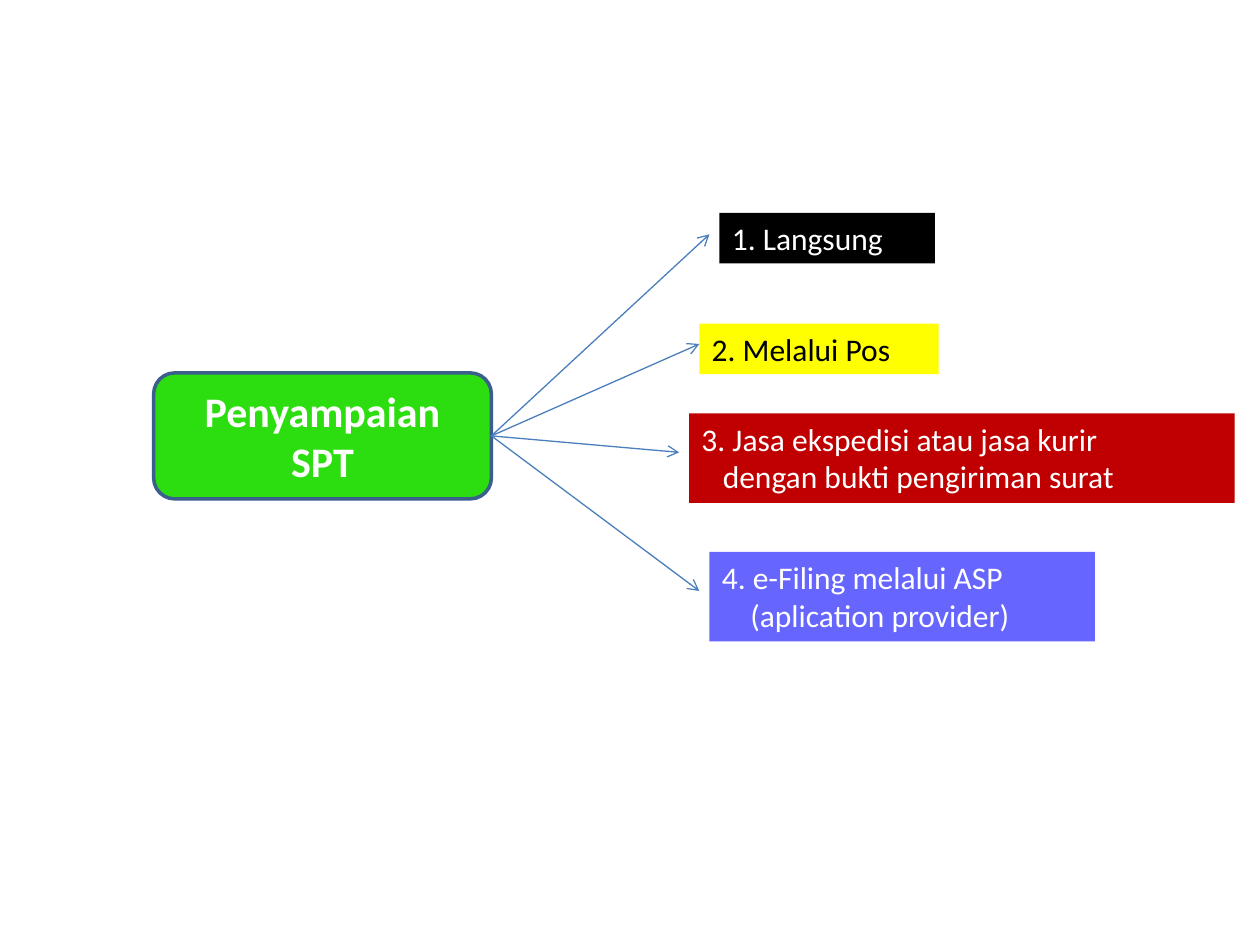
"""Build a slide showing the four ways to submit an SPT."""
from pptx import Presentation
from pptx.dml.color import RGBColor
from pptx.enum import shapes, text
from pptx.oxml import ns, xmlchemy
from pptx.util import Pt

COLORS = {
    "green": "2CDD0F", "edge": "3A5F8C", "arrow": "4B7EBC", "white": "FFFFFF",
    "black": "000000", "yellow": "FFFF00", "red": "C00000", "violet": "6666FF",
}
METHODS = [
    (411.1, 121.7, 123.1, 28.8, "black", "white", ["1. Langsung"], 0, (405.4, 133.9)),
    (399.6, 185, 136.8, 28.8, "yellow", "black", ["2. Melalui Pos"], 0, (399.6, 196.6)),
    (393.8, 236.2, 311.8, 51.1, "red", "white",
     ["3. Jasa ekspedisi atau jasa kurir", "dengan bukti pengiriman surat"], 12.2, (388.1, 258.5)),
    (405.4, 315.4, 220.3, 51.1, "violet", "white",
     ["4. e-Filing melalui ASP", "(aplication provider)"], 16.3, (399.6, 337.7)),
]


def rgb(name):
    return RGBColor.from_string(COLORS[name])


def add_box(kind, box, fill, lines, color, indent, para, font):
    sp = s.shapes.add_shape(kind, *map(Pt, box))
    sp.shadow.inherit = False
    sp.fill.solid()
    sp.fill.fore_color.rgb = rgb(fill)
    sp.line.fill.background()
    tf = sp.text_frame
    tf.word_wrap = True
    for i, line in enumerate(lines):
        p = tf.paragraphs[0] if i == 0 else tf.add_paragraph()
        if i and indent:
            p._p.get_or_add_pPr().set("marL", str(Pt(indent)))
        for key, value in para.items():
            setattr(p, key, value)
        r = p.add_run()
        r.text = line
        for key, value in font.items():
            setattr(r.font, key, value)
        r.font.color.rgb = rgb(color)
    return sp


prs = Presentation()
prs.slide_width, prs.slide_height = Pt(720), Pt(540)
s = prs.slides.add_slide(prs.slide_layouts[6])

hub = add_box(shapes.MSO_SHAPE.ROUNDED_RECTANGLE, (87.8, 213.1, 193, 72), "green",
              ["Penyampaian SPT"], "white", 0, {"alignment": text.PP_ALIGN.CENTER},
              {"name": "Calibri", "size": Pt(24), "bold": True})
hub.text_frame.vertical_anchor = text.MSO_ANCHOR.MIDDLE
hub.line.color.rgb = rgb("edge")
hub.line.width = Pt(2)

for x, y, w, h, fill, color, lines, indent, tip in METHODS:
    arrow = s.shapes.add_connector(shapes.MSO_CONNECTOR.STRAIGHT, Pt(280.8), Pt(249.1), *map(Pt, tip))
    arrow.begin_connect(hub, 3)
    arrow.line.color.rgb = rgb("arrow")
    arrow.line.width = Pt(0.75)
    tail = xmlchemy.OxmlElement("a:tailEnd")
    tail.set("type", "arrow")
    arrow.line._get_or_add_ln().append(tail)
    arrow._element.spPr.append(xmlchemy.OxmlElement("a:effectLst"))

    sp = add_box(shapes.MSO_SHAPE.RECTANGLE, (x, y, w, h), fill, lines, color, indent,
                 {"alignment": text.PP_ALIGN.LEFT}, {"name": "Calibri", "size": Pt(18)})
    sp.text_frame.vertical_anchor = text.MSO_ANCHOR.TOP

prs.save("out.pptx")
